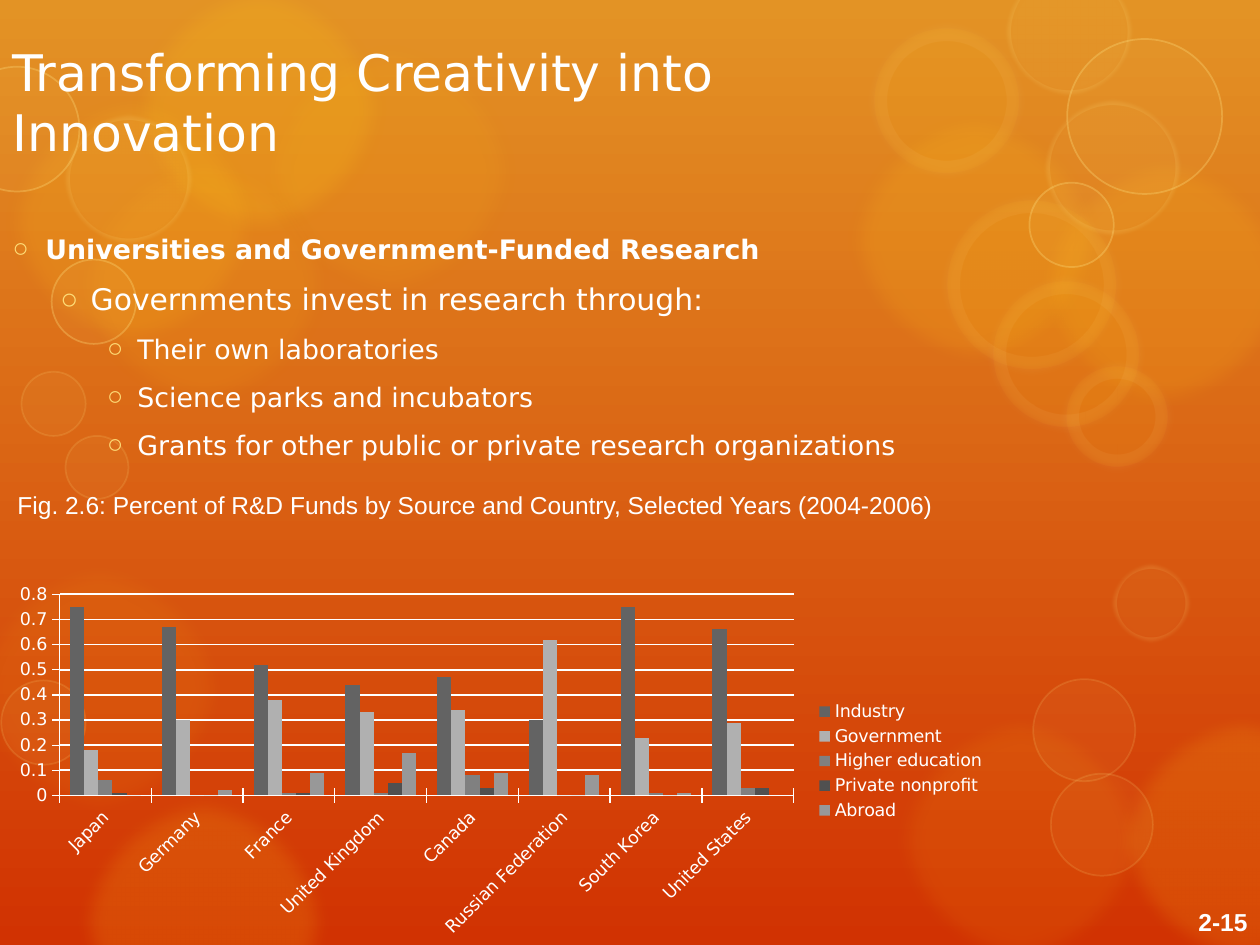
from dataclasses import dataclass

import lxml.etree
import pptx
import pptx.chart.data
import pptx.dml.color
import pptx.enum.chart
import pptx.enum.shapes
import pptx.enum.text
import pptx.oxml.ns
import pptx.util

Inches = pptx.util.Inches
Pt = pptx.util.Pt
qn = pptx.oxml.ns.qn


@dataclass(frozen=True)
class Theme:
    top: str = "E39325"
    bottom: str = "D13202"
    text: str = "FFFFFF"
    bullet: str = "FEDD78"
    gold: str = "FDC61B"
    pale: str = "FFE281"
    cream: str = "FEEBAE"
    series: tuple = ("636363", "B0B0B0", "808080", "505050", "989898")
    heading_font: str = "DejaVu Sans"
    label_font: str = "Arial"
    title_size: float = 28.8
    lead_size: float = 17
    body_size: float = 15.3
    label_size: float = 14
    chart_size: float = 10


@dataclass(frozen=True)
class Bubble:
    """Look of one family of background circles."""
    fill: str
    line: str = ""
    width: float = 0
    line_alpha: int = 0
    soft: float = 0


def rgb(value):
    return pptx.dml.color.RGBColor.from_string(value)


class SlideBuilder:
    def __init__(self, slide, theme):
        self.slide, self.theme = slide, theme

    def background(self):
        fill = self.slide.background.fill
        fill.gradient()
        fill.gradient_angle = 270
        for stop, color in zip(fill.gradient_stops, (self.theme.top, self.theme.bottom)):
            stop.color.rgb = rgb(color)

    def bubble(self, look, left, top, size, alpha):
        circle = self.slide.shapes.add_shape(pptx.enum.shapes.MSO_SHAPE.OVAL,
                                             *map(Inches, (left, top, size, size)))
        circle.shadow.inherit = False
        circle.fill.solid()
        circle.fill.fore_color.rgb = rgb(look.fill)
        alphas = [alpha]
        if look.line:
            circle.line.color.rgb = rgb(look.line)
            circle.line.width = Pt(look.width)
            alphas.append(look.line_alpha)
        else:
            circle.line.fill.background()
        properties = circle._element.spPr
        for color, percent in zip(properties.iter(qn("a:srgbClr")), alphas):
            lxml.etree.SubElement(color, qn("a:alpha"), val=str(percent * 1000))
        if look.soft:
            lxml.etree.SubElement(properties.find(qn("a:effectLst")), qn("a:softEdge"),
                                  rad=str(Inches(look.soft)))

    def run(self, paragraph, text, size, font, bold=False):
        piece = paragraph.add_run()
        piece.text = text
        piece.font.size, piece.font.name, piece.font.bold = Pt(size), font, bold
        piece.font.color.rgb = rgb(self.theme.text)

    def placeholder(self, index, box):
        holder = self.slide.placeholders[index]
        holder.left, holder.top, holder.width, holder.height = map(Inches, box)
        self.slide.shapes._spTree.append(holder._element)  # in front of the bubbles
        frame = holder.text_frame
        frame.word_wrap = True
        frame.auto_size = pptx.enum.text.MSO_AUTO_SIZE.NONE
        frame.vertical_anchor = pptx.enum.text.MSO_ANCHOR.MIDDLE
        return frame

    def title(self, text, box):
        heading = self.placeholder(0, box).paragraphs[0]
        heading.alignment = pptx.enum.text.PP_ALIGN.LEFT
        self.run(heading, text, self.theme.title_size, self.theme.heading_font)

    def bullets(self, items, box):
        frame = self.placeholder(1, box)
        indents = ((0.26, 0.26), (0.62, 0.24), (0.99, 0.24))
        for number, (level, text, size, bold) in enumerate(items):
            item = frame.add_paragraph() if number else frame.paragraphs[0]
            item.level = level
            item.alignment = pptx.enum.text.PP_ALIGN.LEFT
            item.space_before = Pt(0.2 * size if number else 0)
            item.space_after = Pt(6)
            margin, hanging = indents[level]
            properties = item._p.get_or_add_pPr()
            properties.set("marL", str(Inches(margin)))
            properties.set("indent", str(-Inches(hanging)))
            color = lxml.etree.SubElement(properties, qn("a:buClr"))
            lxml.etree.SubElement(color, qn("a:srgbClr"), val=self.theme.bullet)
            lxml.etree.SubElement(properties, qn("a:buChar"), char="○")
            self.run(item, text, size, self.theme.heading_font, bold)

    def label(self, text, box, align=pptx.enum.text.PP_ALIGN.LEFT, bold=False):
        frame = self.slide.shapes.add_textbox(*map(Inches, box)).text_frame
        frame.word_wrap = True
        frame.paragraphs[0].alignment = align
        self.run(frame.paragraphs[0], text, self.theme.label_size, self.theme.label_font, bold)

    def column_chart(self, categories, series, box):
        data = pptx.chart.data.CategoryChartData()
        data.categories = categories
        for name, values in series.items():
            data.add_series(name, values)
        chart = self.slide.shapes.add_chart(
            pptx.enum.chart.XL_CHART_TYPE.COLUMN_CLUSTERED, *map(Inches, box), data).chart
        chart.has_title = False
        chart.font.size, chart.font.name = Pt(self.theme.chart_size), self.theme.heading_font
        chart.font.color.rgb = rgb(self.theme.text)
        chart.has_legend = True
        chart.legend.position = pptx.enum.chart.XL_LEGEND_POSITION.RIGHT
        chart.legend.include_in_layout = False
        plot = chart.plots[0]
        plot.vary_by_categories = False
        plot.gap_width, plot.overlap = 150, 0
        for columns, color in zip(plot.series, self.theme.series):
            columns.format.fill.solid()
            columns.format.fill.fore_color.rgb = rgb(color)
        chart.value_axis.has_major_gridlines = True
        for axis in (chart.category_axis, chart.value_axis):
            axis.major_tick_mark = pptx.enum.chart.XL_TICK_MARK.CROSS
            axis.format.line.color.rgb = rgb(self.theme.text)
        gridline = chart.value_axis.major_gridlines.format.line
        gridline.color.rgb, gridline.width = rgb(self.theme.text), Pt(1)
        # Slanted country names
        names = chart.category_axis.tick_labels.font
        names.size, names.name = Pt(self.theme.chart_size), self.theme.heading_font
        names.color.rgb = rgb(self.theme.text)
        chart.category_axis._element.find(qn("c:txPr")).find(qn("a:bodyPr")).set("rot", "-2700000")


THEME = Theme()
GLOW = Bubble(THEME.gold, soft=0.14)
HALO = Bubble(THEME.gold, THEME.cream, 14, 6, 0.07)
BRIGHT_RING = Bubble(THEME.pale, THEME.pale, 1, 30)
DIM_RING = Bubble(THEME.pale, THEME.pale, 1, 15)
SOFT_RING = Bubble(THEME.pale, THEME.pale, 5, 15, 0.04)
# Left, top, diameter and fill opacity of each circle, by look
BUBBLES = {
    GLOW: [(x, y, 2.09, a) for x, y, a in (
        (-0.26, 4.42, 8), (0.57, 1.2, 10), (2.05, 0.31, 10), (0.57, 6.27, 16),
        (1.01, -0.18, 20), (0, 0.72, 15), (8.2, 1.2, 15), (8.81, 5.62, 16),
        (6.69, 0.86, 15), (7.06, 5.62, 10))],
    HALO: [(x, y, d, 10) for x, y, d in (
        (6.94, 0.23, 1.14), (7.52, 1.59, 1.33), (7.89, 2.24, 1.14), (8.47, 2.91, 0.79))],
    BRIGHT_RING: [(x, y, d, 5) for x, y, d in (
        (-0.36, 0.53, 0.99), (0.41, 2.06, 0.67), (8.47, 0.31, 1.23), (8.17, 1.45, 0.67))],
    DIM_RING: [(x, y, d, 5) for x, y, d in (
        (0.01, 5.4, 0.67), (8.34, 6.14, 0.81), (8.2, 5.39, 0.81), (0.17, 2.95, 0.51),
        (0.52, 3.46, 0.5))],
    SOFT_RING: [(x, y, d, 5) for x, y, d in (
        (0.52, 0.92, 1), (8.3, 0.8, 1.06), (7.99, -0.24, 0.99), (8.83, 4.48, 0.61))],
}
RESEARCH = [
    (0, "Universities and Government-Funded Research", THEME.body_size, True),
    (1, "Governments invest in research through:", THEME.lead_size, False),
    (2, "Their own laboratories", THEME.body_size, False),
    (2, "Science parks and incubators", THEME.body_size, False),
    (2, "Grants for other public or private research organizations", THEME.body_size, False),
]
COUNTRIES = ["Japan", "Germany", "France", "United Kingdom", "Canada",
             "Russian Federation", "South Korea", "United States"]
FUNDS = {
    "Industry": (0.75, 0.67, 0.52, 0.44, 0.47, 0.3, 0.75, 0.66),
    "Government": (0.18, 0.3, 0.38, 0.33, 0.34, 0.62, 0.23, 0.29),
    "Higher education": (0.06, 0, 0.01, 0.01, 0.08, 0, 0.01, 0.03),
    "Private nonprofit": (0.01, 0, 0.01, 0.05, 0.03, 0, 0, 0.03),
    "Abroad": (0, 0.02, 0.09, 0.17, 0.09, 0.08, 0.01, None),
}


def main():
    deck = pptx.Presentation()
    deck.slide_width, deck.slide_height = Inches(10), Inches(7.5)
    page = SlideBuilder(deck.slides.add_slide(deck.slide_layouts[1]), THEME)
    # Backdrop
    page.background()
    for look, circles in BUBBLES.items():
        for circle in circles:
            page.bubble(look, *circle)
    # Content
    page.label("2-15", (7.67, 7.15, 2.33, 0.35), pptx.enum.text.PP_ALIGN.RIGHT, bold=True)
    page.title("Transforming Creativity into Innovation", (0, 0.25, 7.25, 1.11))
    page.bullets(RESEARCH, (0, 1.75, 7.67, 2))
    page.column_chart(COUNTRIES, FUNDS, (0, 4.58, 7.92, 2.92))
    page.label("Fig. 2.6: Percent of R&D Funds by Source and Country, Selected Years (2004-2006)",
               (0.04, 3.84, 7.62, 0.34))
    deck.save("out.pptx")


if __name__ == "__main__":
    main()
